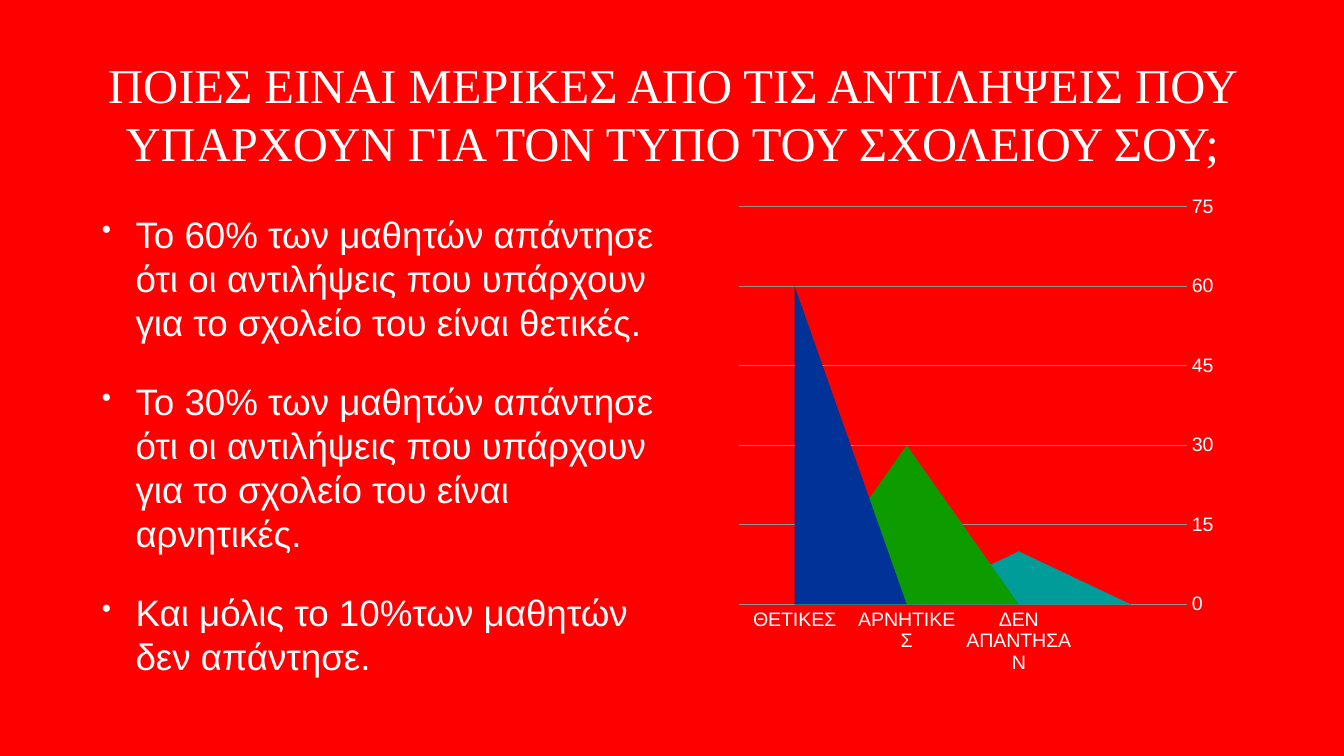
from lxml import etree
from pptx import Presentation
from pptx.chart.data import CategoryChartData
from pptx.dml.color import RGBColor
from pptx.enum.chart import XL_CHART_TYPE as ChartType, XL_TICK_LABEL_POSITION as LabelPosition
from pptx.enum.chart import XL_TICK_MARK as TickMark
from pptx.enum.text import MSO_ANCHOR as Anchor, PP_ALIGN as Align
from pptx.oxml import parse_xml
from pptx.oxml.ns import nsdecls, qn
from pptx.util import Inches, Pt

RED = RGBColor(0xFF, 0x00, 0x00)
WHITE = RGBColor(0xFF, 0xFF, 0xFF)
GREY = RGBColor(0x92, 0x92, 0x92)
BLUE = RGBColor(0x00, 0x32, 0x98)
GREEN = RGBColor(0x0C, 0x9C, 0x00)
TEAL = RGBColor(0x00, 0x9C, 0x99)

presentation = Presentation()
presentation.slide_width = Inches(26.67)
presentation.slide_height = Inches(15)
slide = presentation.slides.add_slide(presentation.slide_layouts[6])
slide.background.fill.solid()
slide.background.fill.fore_color.rgb = RED


def add_text(paragraphs, left, top, width, height, *, font, size,
             align=Align.LEFT, space_before=0, indent=0):
    """Add a middle-anchored text box; a nonzero indent gives bullets."""
    box = slide.shapes.add_textbox(Inches(left), Inches(top), Inches(width), Inches(height))
    frame = box.text_frame
    frame.word_wrap = True
    frame.vertical_anchor = Anchor.MIDDLE
    frame.margin_left = frame.margin_right = Inches(0.06)
    frame.margin_top = frame.margin_bottom = Inches(0.06)
    for index, text in enumerate(paragraphs):
        paragraph = frame.paragraphs[0] if index == 0 else frame.add_paragraph()
        paragraph.alignment = align
        if index:
            paragraph.space_before = Pt(space_before)
        if indent:
            properties = paragraph._p.get_or_add_pPr()
            properties.set("marL", str(Inches(indent)))
            properties.set("indent", str(-Inches(indent)))
            etree.SubElement(properties, qn("a:buSzPct")).set("val", "75000")
            etree.SubElement(properties, qn("a:buChar")).set("char", "•")
        run = paragraph.add_run()
        run.text = text
        run.font.name = font
        run.font.size = Pt(size)
        run.font.color.rgb = WHITE


add_text(
    ["ΠΟΙΕΣ ΕΙΝΑΙ ΜΕΡΙΚΕΣ ΑΠΟ ΤΙΣ ΑΝΤΙΛΗΨΕΙΣ ΠΟΥ ΥΠΑΡΧΟΥΝ ΓΙΑ ΤΟΝ ΤΥΠΟ ΤΟΥ ΣΧΟΛΕΙΟΥ ΣΟΥ;"],
    1.96, 0.62, 22.76, 3.26,
    font="Times New Roman", size=69.4, align=Align.CENTER)

add_text(
    ["Το 60% των μαθητών απάντησε ότι οι αντιλήψεις που υπάρχουν για το σχολείο του είναι θετικές.",
     "Το 30% των μαθητών απάντησε ότι οι αντιλήψεις που υπάρχουν για το σχολείο του είναι αρνητικές.",
     "Και μόλις το 10%των μαθητών δεν απάντησε."],
    1.96, 3.99, 11.13, 9.67,
    font="Arial", size=52.5, space_before=50, indent=0.67)

chart_data = CategoryChartData()
chart_data.categories = ["ΘΕΤΙΚΕΣ", "ΑΡΝΗΤΙΚΕΣ", "ΔΕΝ ΑΠΑΝΤΗΣΑΝ", ""]
chart_data.add_series("Series 1", [60, None, None, None])
chart_data.add_series("Series 2", [None, 30, None, None])
chart_data.add_series("Series 3", [None, None, 10, None])
chart = slide.shapes.add_chart(
    ChartType.AREA, Inches(14.65), Inches(3.89), Inches(9.47), Inches(9.47), chart_data).chart
chart.has_legend = False
chart.has_title = False

plot = chart.plots[0]
plot.vary_by_categories = False
for series, color in zip(plot.series, (BLUE, GREEN, TEAL)):
    series.format.fill.solid()
    series.format.fill.fore_color.rgb = color
    series.format.line.fill.background()

category_axis, value_axis = chart.category_axis, chart.value_axis
for axis, position in ((category_axis, LabelPosition.LOW), (value_axis, LabelPosition.HIGH)):
    axis.tick_label_position = position
    axis.major_tick_mark = axis.minor_tick_mark = TickMark.NONE
    axis.format.line.fill.background()
    label_font = axis.tick_labels.font
    label_font.name = "Arial"
    label_font.size = Pt(28)
    label_font.color.rgb = WHITE
    # Level labels wrap inside their band instead of turning.
    label_body = axis._element.find(qn("c:txPr")).find(qn("a:bodyPr"))
    label_body.set("rot", "0")
    label_body.set("vert", "horz")
category_axis.has_major_gridlines = False
value_axis.minimum_scale = 0
value_axis.maximum_scale = 75
value_axis.major_unit = 15
value_axis.has_major_gridlines = True
value_axis.major_gridlines.format.line.color.rgb = GREY
value_axis.major_gridlines.format.line.width = Pt(1)

# Blanks fall to zero, and each category sits in the middle of its band.
chart_space = chart._chartSpace
for blanks in chart_space.iter(qn("c:dispBlanksAs")):
    blanks.set("val", "zero")
for crossing in chart_space.iter(qn("c:crossBetween")):
    crossing.set("val", "between")

plot_area = chart_space.find(".//" + qn("c:plotArea"))
for layout in plot_area.findall(qn("c:layout")):
    plot_area.remove(layout)
plot_area.insert(0, parse_xml(
    f'<c:layout {nsdecls("c")}><c:manualLayout><c:layoutTarget val="inner"/>'
    '<c:xMode val="edge"/><c:yMode val="edge"/>'
    '<c:x val="0"/><c:y val="0.02"/><c:w val="0.94"/><c:h val="0.84"/>'
    '</c:manualLayout></c:layout>'))

presentation.save("out.pptx")
